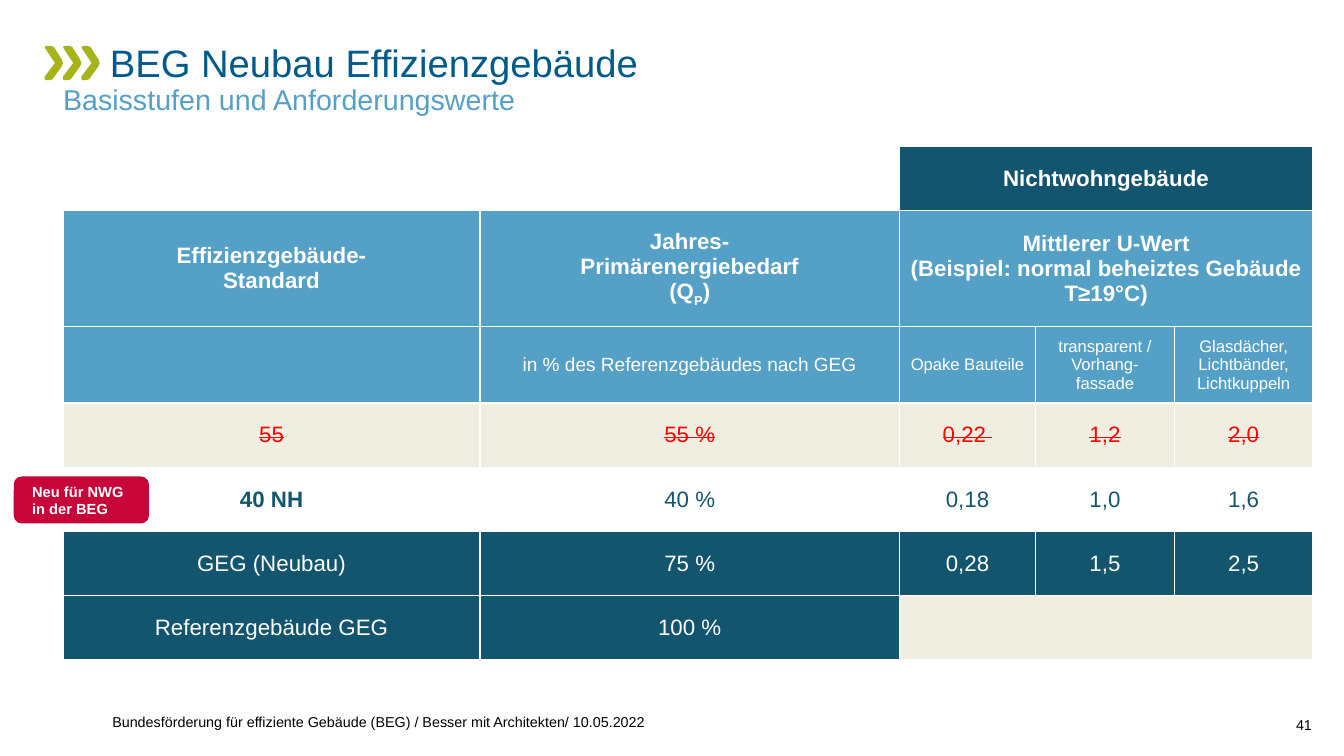
from lxml import etree
from pptx import Presentation
from pptx.dml.color import RGBColor
from pptx.enum.shapes import MSO_SHAPE
from pptx.enum.text import MSO_ANCHOR, PP_ALIGN
from pptx.oxml.ns import qn
from pptx.util import Inches, Pt

ROUNDED = MSO_SHAPE.ROUNDED_RECTANGLE
TOP, MIDDLE, BOTTOM = MSO_ANCHOR.TOP, MSO_ANCHOR.MIDDLE, MSO_ANCHOR.BOTTOM
LEFT, CENTER, RIGHT = PP_ALIGN.LEFT, PP_ALIGN.CENTER, PP_ALIGN.RIGHT

FONT = "Arial"
WHITE, BLACK, RED = "FFFFFF", "000000", "FF0000"
TEAL, SKY, SAND = "13556F", "55A0C6", "F0EEE1"
NAVY, LIME, CRIMSON = "005A8C", "A4B419", "C80538"

# text, left, top, width, height, size, colour, alignment, anchor, line spacing
TEXTS = [
    ("BEG Neubau Effizienzgebäude", 0.96, 0.37, 10.38, 0.41, 24, NAVY, LEFT, TOP, 0.95),
    ("Basisstufen und Anforderungswerte", 0.55, 0.74, 10.79, 0.36, 18, SKY, LEFT, TOP, 0.95),
    ("Bundesförderung für effiziente Gebäude (BEG) / Besser mit Architekten/ 10.05.2022",
     0.98, 6.14, 8.91, 0.24, 9, BLACK, LEFT, BOTTOM, 1.0),
    ("41", 11.13, 6.16, 0.32, 0.24, 9, BLACK, RIGHT, BOTTOM, 1.0),
]
BADGE = "Neu für NWG in der BEG"

# style: cell fill, text colour, size, bold, struck through
STYLES = {
    "blank": (WHITE, TEAL, 14, False, False),
    "group": (TEAL, WHITE, 14, True, False),
    "head": (SKY, WHITE, 14, True, False),
    "unit": (SKY, WHITE, 12, False, False),
    "part": (SKY, WHITE, 10.5, False, False),
    "expired": (SAND, RED, 14, False, True),
    "new": (WHITE, TEAL, 14, False, False),
    "new name": (WHITE, TEAL, 14, True, False),
    "law": (TEAL, WHITE, 14, False, False),
    "unused": (SAND, TEAL, 14, False, False),
}
# Each cell is (style, paragraphs...); a tuple paragraph is base, subscript, base.
# A row of three cells merges the last three columns.
ROWS = [
    [("blank",), ("blank",), ("group", "Nichtwohngebäude")],
    [("head", "Effizienzgebäude-", "Standard"),
     ("head", "Jahres-", "Primärenergiebedarf", ("(Q", "P", ")")),
     ("head", "Mittlerer U-Wert", "(Beispiel: normal beheiztes Gebäude T≥19°C)")],
    [("unit",), ("unit", "in % des Referenzgebäudes nach GEG"), ("part", "Opake Bauteile"),
     ("part", "transparent / Vorhang-fassade"),
     ("part", "Glasdächer, Lichtbänder, Lichtkuppeln")],
    [("expired", text) for text in ("55", "55 %", "0,22 ", "1,2", "2,0")],
    [("new name", "40 NH")] + [("new", text) for text in ("40 %", "0,18", "1,0", "1,6")],
    [("law", text) for text in ("GEG (Neubau)", "75 %", "0,28", "1,5", "2,5")],
    [("law", "Referenzgebäude GEG"), ("law", "100 %"), ("unused",)],
]
COLUMN_WIDTHS = [3.64, 3.66, 1.19, 1.21, 1.21]
ROW_HEIGHTS = [0.56, 1.01, 0.67, 0.56, 0.56, 0.56, 0.56]

CHEVRON = [(0.02, 0), (0.05, 0), (0.08, 0.01), (0.15, 0.12), (0.16, 0.15), (0.15, 0.18),
           (0.07, 0.29), (0.05, 0.3), (0.01, 0.3), (0, 0.29), (0, 0.27), (0.09, 0.15),
           (0.01, 0.03), (0, 0.01)]
CHEVRON_LEFT, CHEVRON_TOP, CHEVRON_STEP = 0.39, 0.4, 0.16


def color(value):
    return RGBColor.from_string(value)


def add_span(para, text, size, ink, bold=False):
    span = para.add_run()
    span.text = text
    span.font.name = FONT
    span.font.size = Pt(size)
    span.font.bold = bold
    span.font.color.rgb = color(ink)
    return span


def set_frame(frame, anchor, horizontal=0, vertical=0):
    """Set wrapping, anchor and insets of a text frame."""
    frame.word_wrap = True
    frame.vertical_anchor = anchor
    frame.margin_left = frame.margin_right = Inches(horizontal)
    frame.margin_top = frame.margin_bottom = Inches(vertical)


def paint(shape, fill):
    """Give a shape a plain fill without line or shadow."""
    shape.shadow.inherit = False
    shape.fill.solid()
    shape.fill.fore_color.rgb = color(fill)
    shape.line.fill.background()


def add_borders(cell):
    properties = cell._tc.get_or_add_tcPr()
    for index, side in enumerate(("a:lnL", "a:lnR", "a:lnT", "a:lnB")):
        line = etree.Element(qn(side), w=str(Pt(1)))
        fill = etree.SubElement(line, qn("a:solidFill"))
        etree.SubElement(fill, qn("a:srgbClr"), val=WHITE)
        properties.insert(index, line)


def fill_cell(cell, style, paragraphs):
    fill, ink, size, bold, struck = STYLES[style]
    cell.fill.solid()
    cell.fill.fore_color.rgb = color(fill)
    cell.vertical_anchor = MIDDLE
    cell.margin_left = cell.margin_right = Inches(0.09)
    cell.margin_top = cell.margin_bottom = Inches(0.04)
    for index, content in enumerate(paragraphs):
        frame = cell.text_frame
        para = frame.add_paragraph() if index else frame.paragraphs[0]
        para.alignment = CENTER
        pieces = content if isinstance(content, tuple) else (content,)
        for position, text in enumerate(pieces):
            properties = add_span(para, text, size, ink, bold).font._element
            if struck:
                properties.set("strike", "sngStrike")
            if position == 1:
                properties.set("baseline", "-25000")


def add_requirements(page):
    frame = page.shapes.add_table(len(ROWS), len(COLUMN_WIDTHS), Inches(0.55), Inches(1.28),
                                  Inches(sum(COLUMN_WIDTHS)), Inches(sum(ROW_HEIGHTS)))
    table = frame.table
    table.first_row = table.horz_banding = False
    for column, width in zip(table.columns, COLUMN_WIDTHS):
        column.width = Inches(width)
    for row, height in zip(table.rows, ROW_HEIGHTS):
        row.height = Inches(height)
    for row, cells in enumerate(ROWS):
        if len(cells) == 3:
            table.cell(row, 2).merge(table.cell(row, 4))
        for column, (style, *paragraphs) in enumerate(cells):
            fill_cell(table.cell(row, column), style, paragraphs)
    for cell in table.iter_cells():
        add_borders(cell)


def add_chevrons(page):
    for index in range(3):
        left = CHEVRON_LEFT + index * CHEVRON_STEP
        points = [(Inches(left + x), Inches(CHEVRON_TOP + y)) for x, y in CHEVRON]
        builder = page.shapes.build_freeform(*points[0])
        builder.add_line_segments(points[1:], close=True)
        paint(builder.convert_to_shape(), LIME)


def add_badge(page):
    badge = page.shapes.add_shape(ROUNDED, Inches(0.12), Inches(4.16), Inches(1.18), Inches(0.41))
    paint(badge, CRIMSON)
    set_frame(badge.text_frame, MIDDLE, 0.14, 0.1)
    para = badge.text_frame.paragraphs[0]
    para.alignment = LEFT
    add_span(para, BADGE, 9.2, WHITE, True)


def main():
    deck = Presentation()
    deck.slide_width, deck.slide_height = Inches(11.73), Inches(6.6)
    page = deck.slides.add_slide(deck.slide_layouts[6])
    add_chevrons(page)
    for text, left, top, width, height, size, ink, alignment, anchor, spacing in TEXTS:
        box = page.shapes.add_textbox(Inches(left), Inches(top), Inches(width), Inches(height))
        set_frame(box.text_frame, anchor)
        para = box.text_frame.paragraphs[0]
        para.alignment = alignment
        para.line_spacing = spacing
        add_span(para, text, size, ink)
    add_requirements(page)
    add_badge(page)
    deck.save("out.pptx")


if __name__ == "__main__":
    main()
